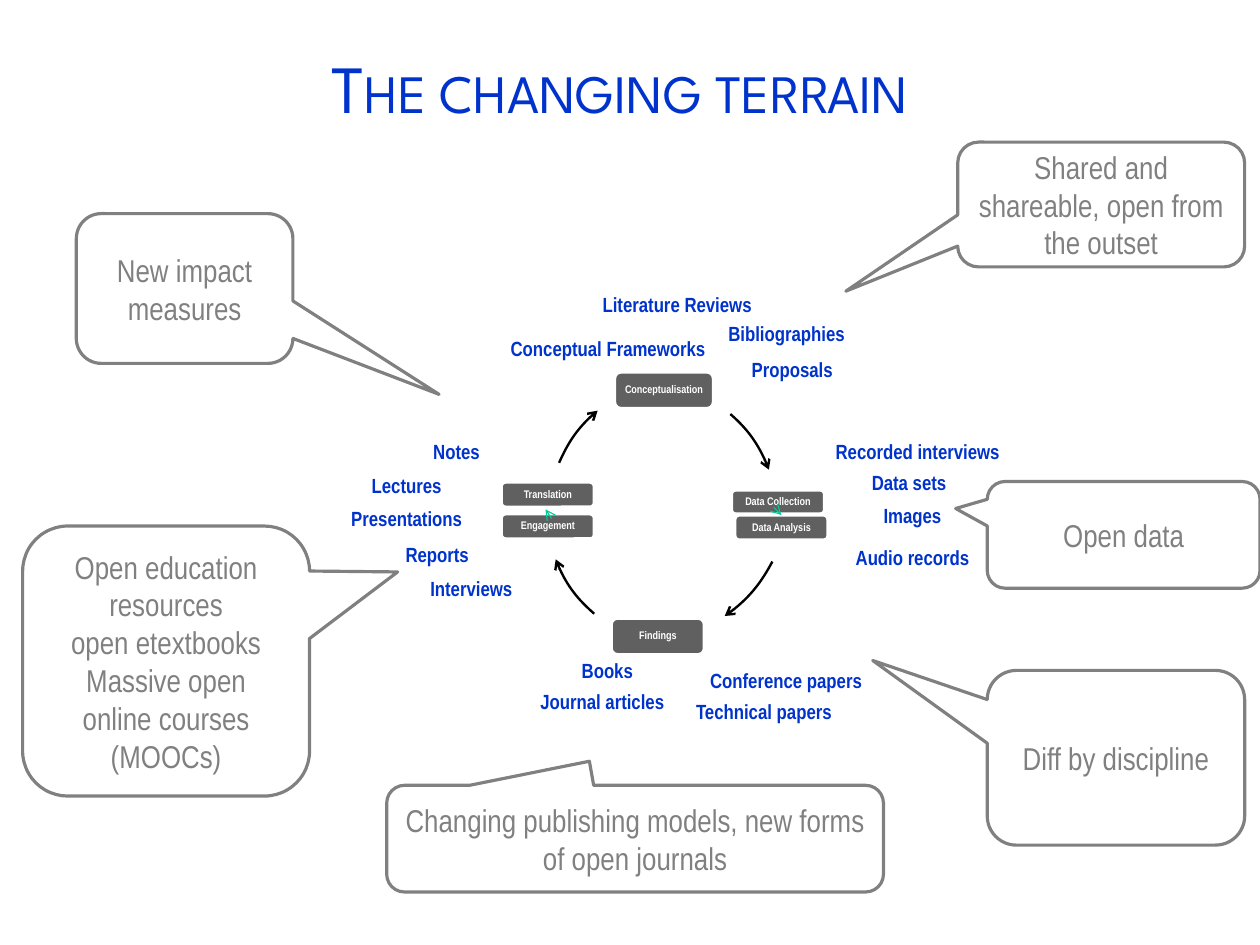
"""Build the slide "The changing terrain": a research cycle with its outputs and callouts."""
from dataclasses import dataclass

from lxml import etree
from pptx import Presentation
from pptx.dml.color import RGBColor
from pptx.enum.shapes import MSO_SHAPE
from pptx.enum.text import MSO_ANCHOR, PP_ALIGN
from pptx.oxml.ns import qn
from pptx.util import Inches, Pt

ROUND_RECT = MSO_SHAPE.ROUNDED_RECTANGLE
CALLOUT = MSO_SHAPE.ROUNDED_RECTANGULAR_CALLOUT
CENTER = PP_ALIGN.CENTER
MIDDLE = MSO_ANCHOR.MIDDLE

COLUMNS, ROWS = 111.1, 83.3
CELL = Inches(0.1)
LABEL_WIDTH, LABEL_HEIGHT = 13.1, 2.6
CORNER = 0.167


@dataclass(frozen=True)
class Theme:
    """Colours, fonts and type sizes of the slide."""
    blue: RGBColor = RGBColor(0x00, 0x33, 0xCC)
    grey: RGBColor = RGBColor(0x80, 0x80, 0x80)
    dark: RGBColor = RGBColor(0x60, 0x60, 0x60)
    green: RGBColor = RGBColor(0x00, 0xCC, 0x99)
    white: RGBColor = RGBColor(0xFF, 0xFF, 0xFF)
    black: RGBColor = RGBColor(0x00, 0x00, 0x00)
    title_font: str = "League Spartan"
    body_font: str = "Arial Narrow"
    title_size: float = 42.9
    callout_size: float = 20
    label_size: float = 13
    node_size: float = 7


THEME = Theme()

TITLE_FORMAT = {"name": THEME.title_font, "size": Pt(THEME.title_size)}
CALLOUT_FORMAT = {"name": THEME.body_font, "size": Pt(THEME.callout_size)}
LABEL_FORMAT = {"name": THEME.body_font, "size": Pt(THEME.label_size), "bold": True}
NODE_FORMAT = {"name": THEME.body_font, "size": Pt(THEME.node_size), "bold": True}

NODES = [
    ("Conceptualisation", (54.2, 32.8, 8.7, 3.2)),
    ("Data Collection", (64.5, 43.2, 8.2, 2.1)),
    ("Data Analysis", (64.8, 45.4, 8.2, 2.2)),
    ("Findings", (53.9, 54.5, 8.2, 3.2)),
    ("Engagement", (44.2, 45.3, 8.2, 2.2)),
    ("Translation", (44.2, 42.5, 8.2, 2.2)),
]

CYCLE_ARROWS = [
    [(64.4, 36.5), (65.9, 37.8), (67.1, 39.5), (67.8, 41.4)],
    [(68.1, 49.5), (67.1, 51.4), (65.7, 53.1), (63.9, 54.3)],
    [(52.4, 54.1), (50.9, 52.8), (49.7, 51.2), (49, 49.3)],
    [(49.3, 40.8), (50.1, 39), (51.2, 37.4), (52.7, 36.2)],
]

STEP_ARROWS = [
    [(68.8, 45.3), (68.8, 45.4), (68.8, 45.4), (68.9, 45.4)],
    [(48.3, 45.2), (48.2, 45.1), (48.2, 45), (48.1, 44.9)],
]

LABELS = [
    ("Conceptual Frameworks", 42.25, 29.4, 22.7),
    ("Literature Reviews", 51.7, 25.5, 16),
    ("Bibliographies", 62.8, 28.1, LABEL_WIDTH),
    ("Proposals", 63.3, 31.3, LABEL_WIDTH),
    ("Recorded interviews", 71.3, 38.5, 19.2),
    ("Data sets", 73.6, 41.2, LABEL_WIDTH),
    ("Images", 73.9, 44.1, LABEL_WIDTH),
    ("Audio records", 73.9, 47.8, LABEL_WIDTH),
    ("Conference papers", 60.7, 58.7, 17.2),
    ("Technical papers", 58.6, 61.4, 17.5),
    ("Books", 47, 57.8, LABEL_WIDTH),
    ("Journal articles", 45.5, 60.5, 15.2),
    ("Notes", 33.7, 38.5, LABEL_WIDTH),
    ("Lectures", 29.3, 41.5, LABEL_WIDTH),
    ("Presentations", 29.3, 44.4, LABEL_WIDTH),
    ("Reports", 32, 47.6, LABEL_WIDTH),
    ("Interviews", 35, 50.6, LABEL_WIDTH),
]

CALLOUTS = [
    ("Shared and shareable, open from the outset", (84.45, 12.53, 25.3, 11), (-0.89, 0.695)),
    ("Diff by discipline", (87.05, 59.1, 22.7, 15.4), (-0.945, -0.557)),
    ("Open data", (87.05, 42.45, 24.05, 9.4), (-0.616, -0.247)),
    ("Changing publishing models, new forms of open journals",
     (34.1, 69.23, 43.8, 9.4), (-0.092, -0.726)),
    ("Open education resources\nopen etextbooks\nMassive open online courses (MOOCs)",
     (2, 46.37, 25.3, 23.8), (0.807, -0.33)),
    ("New impact measures", (6.73, 18.83, 19.1, 13.2), (1.175, 0.707)),
]


def cells(*values):
    """Convert grid units to lengths."""
    return [round(v * CELL) for v in values]


def apply(target, values):
    """Set each attribute in a dict of values."""
    for name, value in values.items():
        setattr(target, name, value)


def write(sp, text, fmt, color, inset=(1.1, 0.6), spacing=None):
    """Write centred paragraphs into a shape and return its text frame."""
    tf = sp.text_frame
    dx, dy = cells(*inset)
    apply(tf, {"word_wrap": True, "vertical_anchor": MIDDLE, "margin_left": dx,
               "margin_right": dx, "margin_top": dy, "margin_bottom": dy})
    for i, line in enumerate(text.split("\n")):
        p = tf.add_paragraph() if i else tf.paragraphs[0]
        apply(p, {"alignment": CENTER, "line_spacing": spacing})
        r = p.add_run()
        r.text = line
        apply(r.font, fmt)
        r.font.color.rgb = color
    return tf


def stroke(sp, color, width):
    """Outline a shape and drop its shadow."""
    sp.shadow.inherit = False
    sp.line.color.rgb = color
    sp.line.width = Pt(width)


def add_title(s, text):
    """Add the small-caps title."""
    sp = s.shapes.add_textbox(*cells(0, 0.7, COLUMNS - 1.8, 13.9))
    tf = write(sp, text, TITLE_FORMAT, THEME.blue)
    tf.paragraphs[0].runs[0]._r.get_or_add_rPr().set("cap", "small")


def add_node(s, text, box):
    """Add one stage of the cycle."""
    sp = s.shapes.add_shape(ROUND_RECT, *cells(*box))
    sp.adjustments[0] = CORNER
    sp.fill.solid()
    sp.fill.fore_color.rgb = THEME.dark
    stroke(sp, THEME.white, 2)
    write(sp, text, NODE_FORMAT, THEME.white, (0.3, 0.3), 0.9)


def add_arrow(s, points, color, width):
    """Add a curved arrow along four Bézier points."""
    start, *rest = [cells(*point) for point in points]
    builder = s.shapes.build_freeform(*start)
    builder.add_line_segments(rest, close=False)
    sp = builder.convert_to_shape()
    sp.fill.background()
    stroke(sp, color, width)
    path = sp._element.find(".//" + qn("a:path"))
    curve = etree.SubElement(path, qn("a:cubicBezTo"))
    for segment in path.findall(qn("a:lnTo")):
        curve.append(segment[0])
        path.remove(segment)
    etree.SubElement(sp.line._get_or_add_ln(), qn("a:tailEnd"), type="arrow")


def add_label(s, text, left, top, width):
    """Add the name of one research output."""
    sp = s.shapes.add_shape(ROUND_RECT, *cells(left, top, width, LABEL_HEIGHT))
    sp.shadow.inherit = False
    sp.fill.background()
    sp.line.fill.background()
    write(sp, text, LABEL_FORMAT, THEME.blue)


def add_callout(s, text, box, tip):
    """Add a callout whose tip is given relative to its centre."""
    sp = s.shapes.add_shape(CALLOUT, *cells(*box))
    for i, value in enumerate((*tip, CORNER)):
        sp.adjustments[i] = value
    sp.fill.background()
    stroke(sp, THEME.grey, 2)
    write(sp, text, CALLOUT_FORMAT, THEME.grey)


def main():
    """Build and save the slide."""
    prs = Presentation()
    prs.slide_width, prs.slide_height = cells(COLUMNS, ROWS)
    s = prs.slides.add_slide(prs.slide_layouts[6])
    for node in NODES:
        add_node(s, *node)
    for points in CYCLE_ARROWS:
        add_arrow(s, points, THEME.black, 1.5)
    for points in STEP_ARROWS:
        add_arrow(s, points, THEME.green, 0.75)
    for label in LABELS:
        add_label(s, *label)
    for callout in CALLOUTS:
        add_callout(s, *callout)
    add_title(s, "The changing terrain")
    prs.save("out.pptx")


if __name__ == "__main__":
    main()
